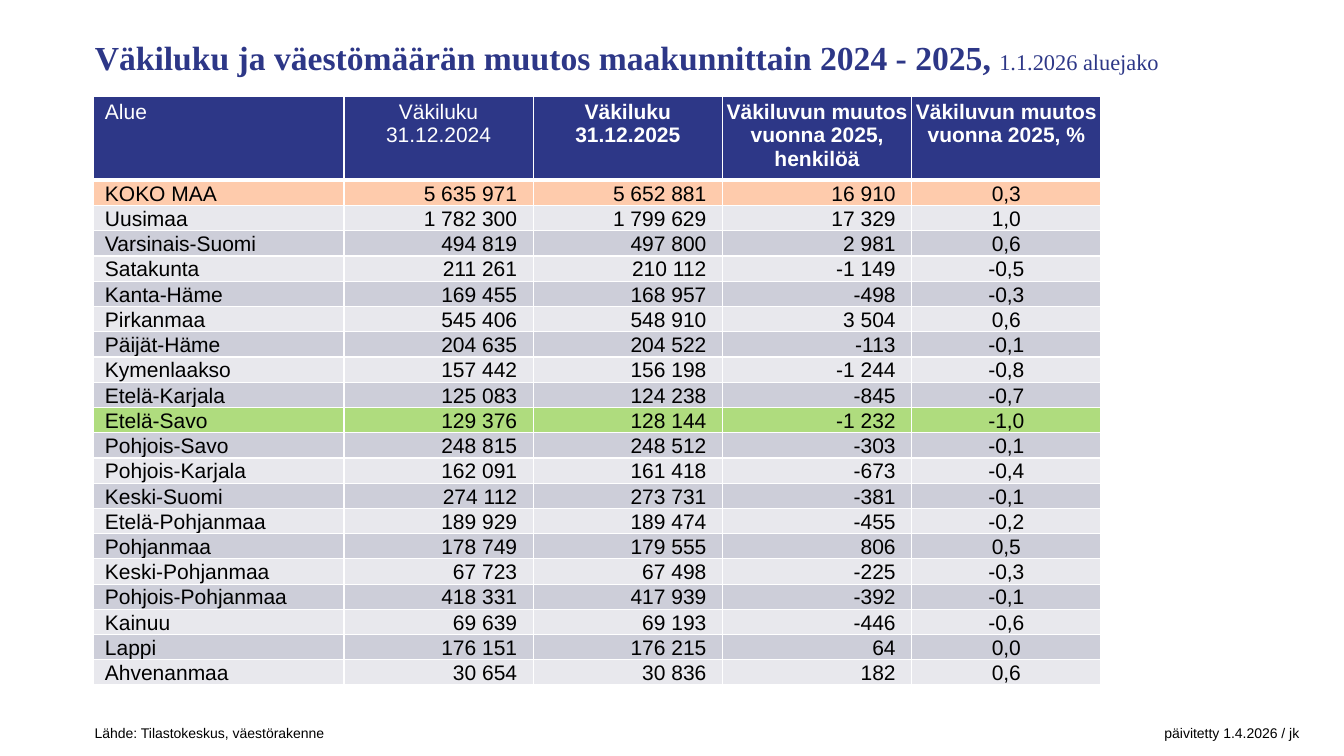
import pptx
import pptx.dml.color
import pptx.enum.text
import pptx.oxml.ns
import pptx.util
from lxml import etree

Pt = pptx.util.Pt
RGBColor = pptx.dml.color.RGBColor
Align = pptx.enum.text.PP_ALIGN
Anchor = pptx.enum.text.MSO_ANCHOR
AutoSize = pptx.enum.text.MSO_AUTO_SIZE
qn = pptx.oxml.ns.qn

NAVY = RGBColor(0x2D, 0x37, 0x87)
WHITE = RGBColor(0xFF, 0xFF, 0xFF)
BLACK = RGBColor(0, 0, 0)
PEACH = RGBColor(0xFE, 0xCB, 0xAC)
GREEN = RGBColor(0xAF, 0xDC, 0x7E)
BANDS = (RGBColor(0xCD, 0xCE, 0xD9), RGBColor(0xE8, 0xE8, 0xED))
HIGHLIGHTS = {"KOKO MAA": PEACH, "Etelä-Savo": GREEN}

HEADINGS = (
    (("Alue",), False),
    (("Väkiluku", "31.12.2024"), False),
    (("Väkiluku 31.12.2025",), True),
    (("Väkiluvun muutos vuonna 2025, henkilöä",), True),
    (("Väkiluvun muutos vuonna 2025, %",), True),
)
REGIONS = (
    ("KOKO MAA", "5 635 971", "5 652 881", "16 910", "0,3"),
    ("Uusimaa", "1 782 300", "1 799 629", "17 329", "1,0"),
    ("Varsinais-Suomi", "494 819", "497 800", "2 981", "0,6"),
    ("Satakunta", "211 261", "210 112", "-1 149", "-0,5"),
    ("Kanta-Häme", "169 455", "168 957", "-498", "-0,3"),
    ("Pirkanmaa", "545 406", "548 910", "3 504", "0,6"),
    ("Päijät-Häme", "204 635", "204 522", "-113", "-0,1"),
    ("Kymenlaakso", "157 442", "156 198", "-1 244", "-0,8"),
    ("Etelä-Karjala", "125 083", "124 238", "-845", "-0,7"),
    ("Etelä-Savo", "129 376", "128 144", "-1 232", "-1,0"),
    ("Pohjois-Savo", "248 815", "248 512", "-303", "-0,1"),
    ("Pohjois-Karjala", "162 091", "161 418", "-673", "-0,4"),
    ("Keski-Suomi", "274 112", "273 731", "-381", "-0,1"),
    ("Etelä-Pohjanmaa", "189 929", "189 474", "-455", "-0,2"),
    ("Pohjanmaa", "178 749", "179 555", "806", "0,5"),
    ("Keski-Pohjanmaa", "67 723", "67 498", "-225", "-0,3"),
    ("Pohjois-Pohjanmaa", "418 331", "417 939", "-392", "-0,1"),
    ("Kainuu", "69 639", "69 193", "-446", "-0,6"),
    ("Lappi", "176 151", "176 215", "64", "0,0"),
    ("Ahvenanmaa", "30 654", "30 836", "182", "0,6"),
)
REGION_ALIGNS = (Align.LEFT, Align.RIGHT, Align.RIGHT, Align.RIGHT, Align.CENTER)
COLUMN_WIDTHS = (179.2, 135.2, 135.2, 135.2, 135.2)
HEADER_HEIGHT = 59.8
ROW_HEIGHT = 18


def add_run(paragraph, text, size, color, bold=False, font="Arial"):
    run = paragraph.add_run()
    run.text = text
    run.font.name = font
    run.font.size = Pt(size)
    run.font.bold = bold
    run.font.color.rgb = color


def set_borders(cell, bottom):
    """Draw white edges: 1 pt at the left, right and top, `bottom` pt below."""
    properties = cell._tc.get_or_add_tcPr()
    for edge, width in (("L", 1), ("R", 1), ("T", 1), ("B", bottom)):
        line = etree.SubElement(properties, qn(f"a:ln{edge}"), w=str(Pt(width)))
        fill = etree.SubElement(line, qn("a:solidFill"))
        etree.SubElement(fill, qn("a:srgbClr"), val=str(WHITE))


def fill_cell(cell, lines, align, fill, color, bold=False, header=False):
    set_borders(cell, bottom=3 if header else 1)
    cell.fill.solid()
    cell.fill.fore_color.rgb = fill
    cell.vertical_anchor = Anchor.TOP if header else Anchor.BOTTOM
    cell.margin_left = Pt(8.5 if align == Align.LEFT else 0)
    cell.margin_right = Pt(11.5 if align == Align.RIGHT else 0)
    cell.margin_top = cell.margin_bottom = Pt(3 if header else 0)
    for index, line in enumerate(lines):
        frame = cell.text_frame
        paragraph = frame.add_paragraph() if index else frame.paragraphs[0]
        paragraph.alignment = align
        add_run(paragraph, line, 15, color, bold)


def set_title(slide):
    title = slide.shapes.title
    title.left, title.top, title.width, title.height = Pt(60.5), Pt(21), Pt(839), Pt(39.5)
    frame = title.text_frame
    frame.auto_size = AutoSize.NONE
    frame.vertical_anchor = Anchor.MIDDLE
    paragraph = frame.paragraphs[0]
    paragraph.alignment = Align.LEFT
    add_run(paragraph, "Väkiluku ja väestömäärän muutos maakunnittain 2024 - 2025, ",
            24, NAVY, True, "Times New Roman")
    add_run(paragraph, "1.1.2026 aluejako", 16, NAVY, False, "Times New Roman")


def add_population_table(slide):
    height = HEADER_HEIGHT + ROW_HEIGHT * len(REGIONS)
    table = slide.shapes.add_table(len(REGIONS) + 1, len(HEADINGS), Pt(66.5), Pt(68.8),
                                   Pt(sum(COLUMN_WIDTHS)), Pt(height)).table
    table.horz_banding = False
    for column, width in zip(table.columns, COLUMN_WIDTHS):
        column.width = Pt(width)
    for index, row in enumerate(table.rows):
        row.height = Pt(ROW_HEIGHT if index else HEADER_HEIGHT)

    for column, (lines, bold) in enumerate(HEADINGS):
        align = Align.CENTER if column else Align.LEFT
        fill_cell(table.cell(0, column), lines, align, NAVY, WHITE, bold, header=True)
    for index, region in enumerate(REGIONS):
        fill = HIGHLIGHTS.get(region[0], BANDS[index % 2])
        for column, (value, align) in enumerate(zip(region, REGION_ALIGNS)):
            fill_cell(table.cell(index + 1, column), (value,), align, fill, BLACK)


def add_footer(slide):
    """Source at the left, date of update at a right tab stop."""
    footer = slide.shapes.add_textbox(Pt(60.5), Pt(514), Pt(890), Pt(19.5))
    frame = footer.text_frame
    frame.word_wrap = True
    paragraph = frame.paragraphs[0]
    tabs = etree.SubElement(paragraph._p.get_or_add_pPr(), qn("a:tabLst"))
    etree.SubElement(tabs, qn("a:tab"), pos=str(Pt(860.5)), algn="r")
    add_run(paragraph, "Lähde: Tilastokeskus, väestörakenne\tpäivitetty 1.4.2026 / jk", 10, BLACK)


def main():
    presentation = pptx.Presentation()
    presentation.slide_width, presentation.slide_height = Pt(960), Pt(540)
    slide = presentation.slides.add_slide(presentation.slide_layouts[5])
    set_title(slide)
    add_footer(slide)
    add_population_table(slide)
    presentation.save("out.pptx")


if __name__ == "__main__":
    main()
